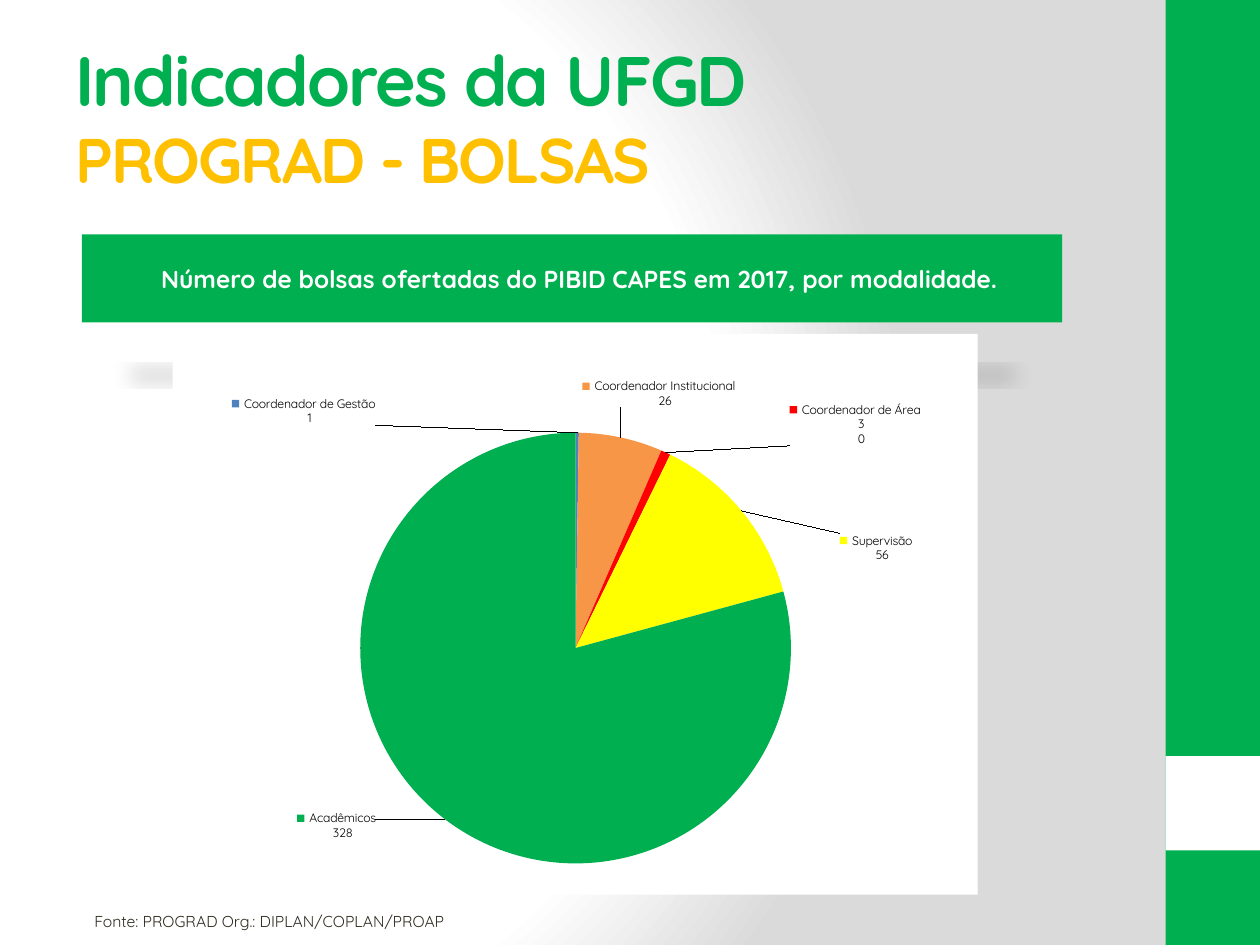
from copy import deepcopy
from lxml.etree import SubElement
from pptx import Presentation
from pptx.chart.data import CategoryChartData
from pptx.dml.color import RGBColor
from pptx.enum.chart import XL_CHART_TYPE, XL_LABEL_POSITION
from pptx.enum.shapes import MSO_SHAPE
from pptx.enum.text import MSO_ANCHOR, PP_ALIGN
from pptx.oxml import parse_xml
from pptx.oxml.ns import nsdecls, qn
from pptx.util import Inches, Pt

W, H = 10, 7.5
FACE = "Quicksand"
GREEN, GOLD, WHITE, INK = "00B050", "FFC000", "FFFFFF", "2F2B20"

# name, value, colour, label shift as shares of the chart, percentage shown
PARTS = [
    ("Coordenador de Gestão", 1, "4F81BD", (-0.34, 0), 0),
    ("Coordenador Institucional", 26, "F79646", (-0.05, -0.04), 0),
    ("Coordenador de Área", 3, "FF0000", (0.15, 0), 1),
    ("Supervisão", 56, "FFFF00", (0.115, 0.1), 0),
    ("Acadêmicos", 328, GREEN, (-0.08, -0.025), 0),
]


def rgb(code):
    return RGBColor.from_string(code)


def inch(box):
    return [Inches(v) for v in box]


def style(font, size, color, bold=False):
    font.name, font.size, font.bold = FACE, Pt(size), bold
    font.color.rgb = rgb(color)


def solid(code):
    return f'<a:solidFill><a:srgbClr val="{code}"/></a:solidFill>'


def layout(x, y, extra="", mode=""):
    return (f'<c:layout {nsdecls("c")}><c:manualLayout>{mode}'
            f'<c:x val="{x}"/><c:y val="{y}"/>{extra}'
            '</c:manualLayout></c:layout>')


def backdrop(slide):
    stops = "".join(
        f'<a:gs pos="{pos}000"><a:srgbClr val="{code}"/></a:gs>'
        for pos, code in ((0, WHITE), (75, WHITE), (100, "DADADA")))
    slide._element.cSld.insert(0, parse_xml(
        f'<p:bg {nsdecls("p", "a")}><p:bgPr><a:gradFill>'
        f'<a:gsLst>{stops}</a:gsLst><a:path path="circle">'
        '<a:fillToRect l="20000" t="50000" r="100000" b="50000"/></a:path>'
        '</a:gradFill><a:effectLst/></p:bgPr></p:bg>'))


def block(slide, box, color):
    shape = slide.shapes.add_shape(MSO_SHAPE.RECTANGLE, *inch(box))
    shape.shadow.inherit = False
    shape.fill.solid()
    shape.fill.fore_color.rgb = rgb(color)
    shape.line.fill.background()
    return shape


def side(slide, box):
    x, y, w, h = box
    block(slide, box, GREEN)
    block(slide, (x, y + 0.8 * h, w, 0.1 * h), WHITE)


def words(slide, box, text, anchor=MSO_ANCHOR.TOP):
    frame = slide.shapes.add_textbox(*inch(box)).text_frame
    frame.word_wrap = True
    frame.vertical_anchor = anchor
    frame.text = text
    return frame.paragraphs[0].runs


def title(slide, box):
    runs = words(slide, box, "Indicadores da UFGD\vPROGRAD - BOLSAS",
                 MSO_ANCHOR.MIDDLE)
    for run, size, color in zip(runs, (40, 36), (GREEN, GOLD)):
        style(run.font, size, color, True)
        run._r.get_or_add_rPr().set("spc", "-100")


def banner(slide, box):
    shape = block(slide, box, GREEN)
    effect = shape._element.spPr.find(qn("a:effectLst"))
    effect.append(parse_xml(
        f'<a:outerShdw {nsdecls("a")} blurRad="{Pt(12)}" dist="{Pt(25)}" '
        'dir="5400000" sx="90000" sy="-19000" rotWithShape="0">'
        '<a:srgbClr val="000000"><a:alpha val="15000"/></a:srgbClr>'
        '</a:outerShdw>'))
    frame = shape.text_frame
    frame.vertical_anchor = MSO_ANCHOR.MIDDLE
    frame.text = ("Número de bolsas ofertadas do PIBID CAPES em 2017, "
                  "por modalidade.")
    para = frame.paragraphs[0]
    para.alignment = PP_ALIGN.CENTER
    para._p.get_or_add_pPr().set("marL", str(Inches(0.12)))
    style(para.runs[0].font, 14, WHITE, True)


def tag(index, shift, share, font):
    """Return one label with its colour key, moved by shift."""
    item = parse_xml(
        f'<c:dLbl {nsdecls("c")}><c:idx val="{index}"/>{layout(*shift)}'
        '<c:dLblPos val="bestFit"/><c:showLegendKey val="1"/>'
        '<c:showVal val="1"/><c:showCatName val="1"/>'
        f'<c:showSerName val="0"/><c:showPercent val="{share}"/>'
        '<c:showBubbleSize val="0"/><c:separator>\n</c:separator></c:dLbl>')
    item.insert(2, deepcopy(font))
    return item


def label(series):
    labels = series.data_labels
    style(labels.font, 7, "000000")
    labels.number_format, labels.number_format_is_linked = "#,##0", False
    labels.position = XL_LABEL_POSITION.BEST_FIT
    labels.show_value = labels.show_category_name = True
    labels.show_legend_key = True
    root = labels._element
    gap = SubElement(root, qn("c:separator"))
    gap.text = "\n"
    root.find(qn("c:showBubbleSize")).addnext(gap)
    font = root.find(qn("c:txPr"))
    for i, (_, _, _, shift, share) in enumerate(PARTS):
        root.insert(i, tag(i, shift, share, font))


def pie(slide, box):
    data = CategoryChartData(number_format="#,##0")
    data.categories = [part[0] for part in PARTS]
    data.add_series("Series 1", [part[1] for part in PARTS])
    chart = slide.shapes.add_chart(XL_CHART_TYPE.PIE, *inch(box), data).chart
    chart.has_legend = chart.has_title = False
    chart.font.name, chart.font.size = "Calibri", Pt(10)
    chart.font.color.rgb = rgb(INK)
    plot = chart.plots[0]
    plot.vary_by_categories = True
    for i, part in enumerate(PARTS):
        fill = plot.series[0].points[i].format.fill
        fill.solid()
        fill.fore_color.rgb = rgb(part[2])
    label(plot.series[0])

    root = chart._chartSpace
    area = root.chart.plotArea
    for old in area.findall(qn("c:layout")):
        area.remove(old)
    area.insert(0, parse_xml(layout(
        0.233, 0.156, '<c:w val="0.535"/><c:h val="0.809"/>',
        '<c:layoutTarget val="inner"/><c:xMode val="edge"/>'
        '<c:yMode val="edge"/>')))
    paint = (f'<c:spPr {nsdecls("c", "a")}>{solid(WHITE)}'
             '<a:ln><a:noFill/></a:ln></c:spPr>')
    area.append(parse_xml(paint))
    root.chart.addnext(parse_xml(paint))


def source(slide, box):
    run = words(slide, box, "Fonte: PROGRAD Org.: DIPLAN/COPLAN/PROAP")[0]
    style(run.font, 9, INK)


def main():
    deck = Presentation()
    deck.slide_width, deck.slide_height = Inches(W), Inches(H)
    slide = deck.slides.add_slide(deck.slide_layouts[6])
    backdrop(slide)
    side(slide, (0.925 * W, 0, 0.075 * W, H))
    title(slide, (0.05 * W, 0.04 * H, 8.33, 1.25))
    banner(slide, (0.65, 1.86, 7.78, 0.7))
    pie(slide, (1.37, 2.65, 6.39, 4.45))
    source(slide, (0.65, 7.19, 4.54, 0.25))
    deck.save("out.pptx")


if __name__ == "__main__":
    main()
